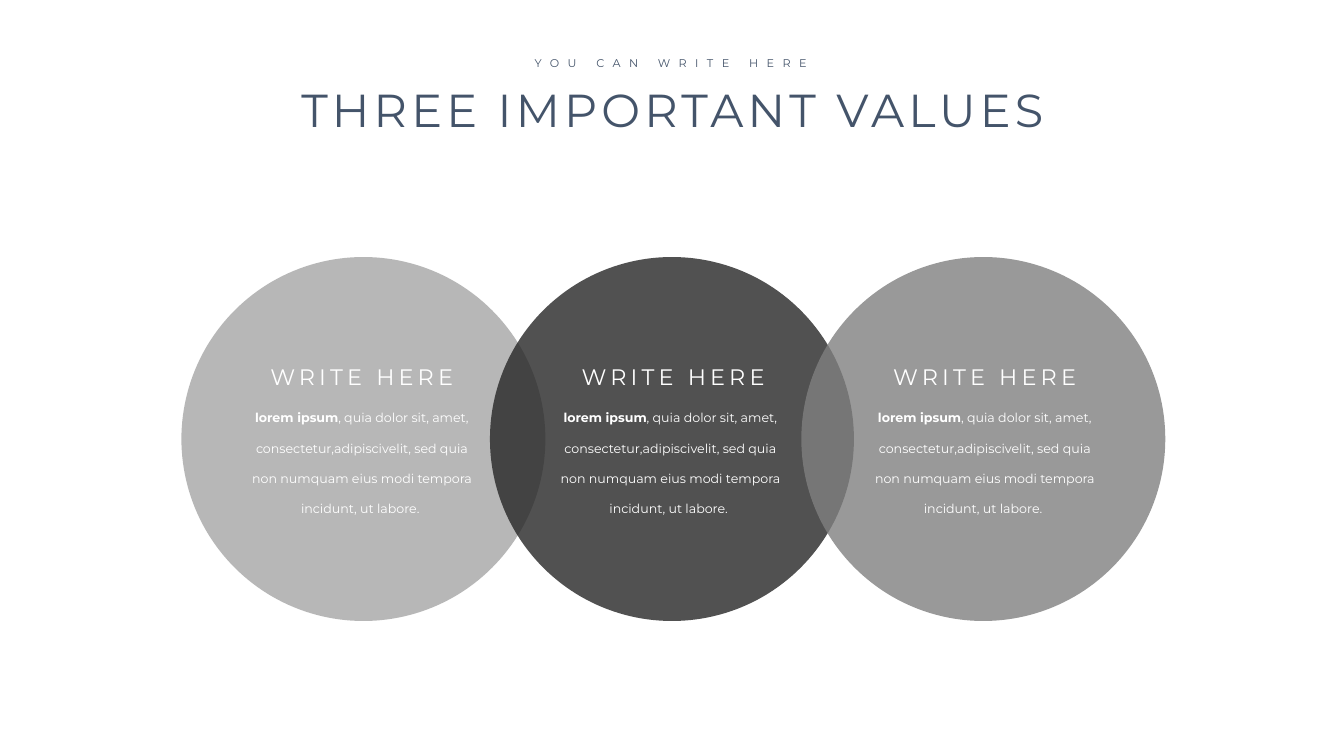
"""Build a slide with three overlapping circles, each holding a heading and a short text."""
from dataclasses import dataclass

import lxml.etree
import pptx
import pptx.dml.color
import pptx.enum.shapes
import pptx.enum.text
import pptx.oxml.ns
import pptx.util


@dataclass(frozen=True)
class Theme:
    font: str = "Montserrat"
    ink: str = "44546A"
    light: str = "FFFFFF"
    circles: tuple = ("A6A6A6", "262626", "808080")
    opacity: int = 80
    title_size: int = 33
    kicker_size: int = 8
    heading_size: int = 16
    body_size: int = 9


class SlideBuilder:
    def __init__(self, slide, theme):
        self.slide = slide
        self.theme = theme

    def place(self, shape, left, top, width, height):
        shape.left, shape.top = pptx.util.Pt(left), pptx.util.Pt(top)
        shape.width, shape.height = pptx.util.Pt(width), pptx.util.Pt(height)

    def style(self, shape, size, color, tracking=0, wrap=True, line_spacing=1.0):
        frame = shape.text_frame
        frame.word_wrap = wrap
        frame.auto_size = pptx.enum.text.MSO_AUTO_SIZE.SHAPE_TO_FIT_TEXT
        frame.vertical_anchor = pptx.enum.text.MSO_ANCHOR.TOP
        paragraph = frame.paragraphs[0]
        paragraph.alignment = pptx.enum.text.PP_ALIGN.CENTER
        paragraph.line_spacing = line_spacing
        for run in paragraph.runs:
            run.font.name = self.theme.font
            run.font.size = pptx.util.Pt(size)
            run.font.color.rgb = pptx.dml.color.RGBColor.from_string(color)
            if tracking:
                run.font._element.set("spc", str(tracking * 100))

    def title(self, text, *box):
        shape = self.slide.shapes.title
        self.place(shape, *box)
        shape.text_frame.text = text
        self.style(shape, self.theme.title_size, self.theme.ink, tracking=3, wrap=False)

    def label(self, text, size, color, tracking, wrap, *box):
        shape = self.slide.shapes.add_textbox(*map(pptx.util.Pt, box))
        shape.text_frame.text = text
        self.style(shape, size, color, tracking, wrap)

    def body(self, lead, text, *box):
        shape = self.slide.shapes.add_textbox(*map(pptx.util.Pt, box))
        paragraph = shape.text_frame.paragraphs[0]
        for part, bold in ((lead, True), (text, False)):
            run = paragraph.add_run()
            run.text = part
            run.font.bold = bold
        self.style(shape, self.theme.body_size, self.theme.light, line_spacing=2.0)

    def circle(self, color, left, top, diameter):
        shape = self.slide.shapes.add_shape(
            pptx.enum.shapes.MSO_SHAPE.OVAL,
            *map(pptx.util.Pt, (left, top, diameter, diameter)),
        )
        shape.shadow.inherit = False
        shape.line.fill.background()
        shape.fill.solid()
        shape.fill.fore_color.rgb = pptx.dml.color.RGBColor.from_string(color)
        qn = pptx.oxml.ns.qn
        fill_color = shape._element.spPr.find(qn("a:solidFill")).find(qn("a:srgbClr"))
        alpha = lxml.etree.SubElement(fill_color, qn("a:alpha"))
        alpha.set("val", str(self.theme.opacity * 1000))


def main():
    theme = Theme()
    presentation = pptx.Presentation()
    presentation.slide_width = pptx.util.Pt(960)
    presentation.slide_height = pptx.util.Pt(540)
    slide = presentation.slides.add_slide(presentation.slide_layouts[5])
    builder = SlideBuilder(slide, theme)

    circle_lefts = (129.6, 350, 572.4)
    heading_lefts = (184.3, 406.8, 629.3)
    body_lefts = (172.1, 392.4, 617)
    lead = "lorem ipsum"
    text = (
        ", quia dolor sit, amet, consectetur,adipiscivelit, sed quia "
        "non numquam eius modi tempora incidunt, ut labore. "
    )

    for color, left in zip(theme.circles, circle_lefts):
        builder.circle(color, left, 183.6, 260)
    builder.title("THREE IMPORTANT VALUES", 207.4, 54.7, 546.5, 47.5)
    builder.label("YOU CAN WRITE HERE", theme.kicker_size, theme.ink, 6, True,
                  355.7, 36.7, 247, 17.3)
    for heading_left, body_left in zip(heading_lefts, body_lefts):
        builder.label("WRITE HERE", theme.heading_size, theme.light, 3, False,
                      heading_left, 255.8, 148.3, 26.6)
        builder.body(lead, text, body_left, 278.6, 172.8, 91.4)

    presentation.save("out.pptx")


if __name__ == "__main__":
    main()
